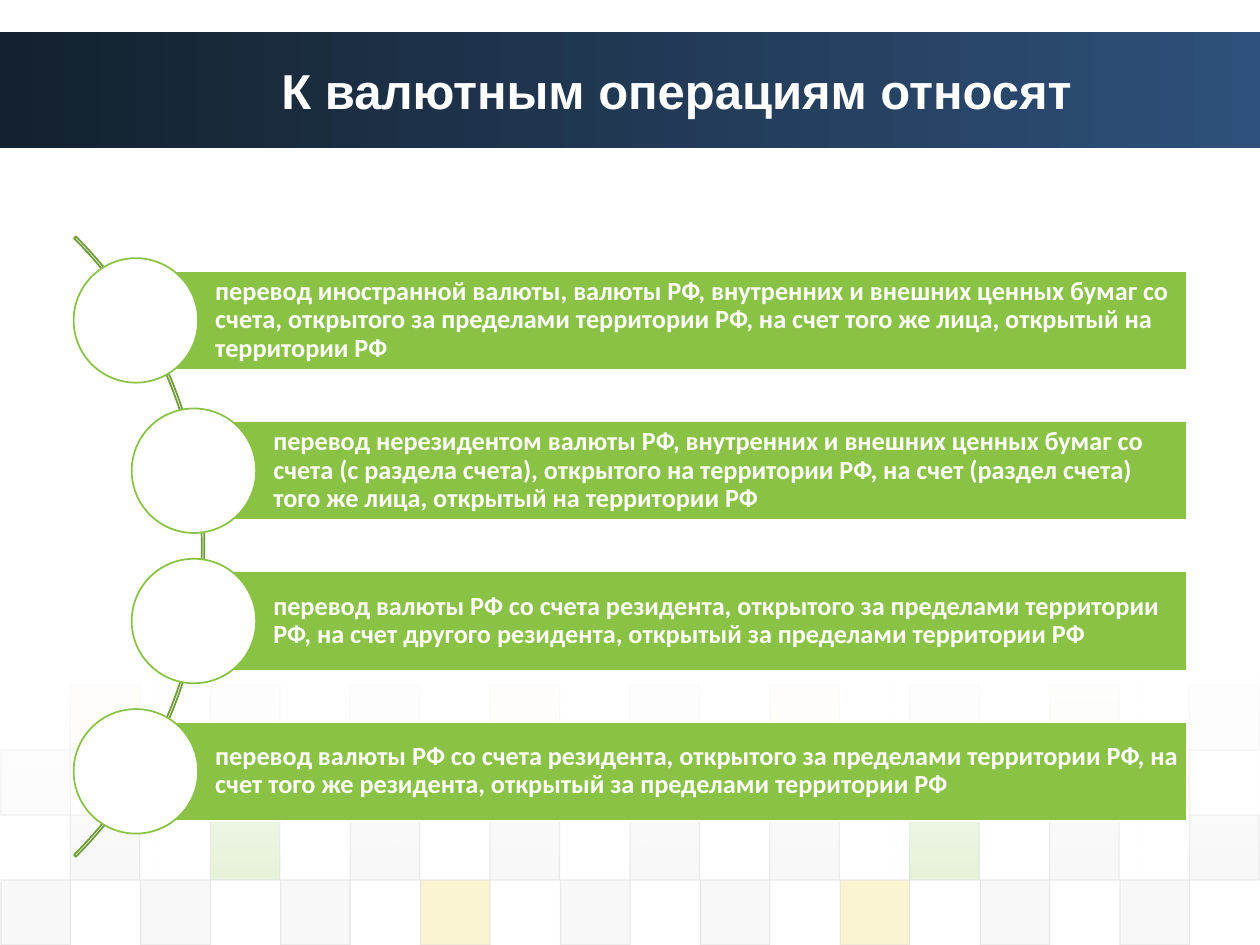
from typing import NamedTuple

from pptx import Presentation
from pptx import util as u
from pptx.dml.color import RGBColor
from pptx.enum import shapes, text
from pptx.oxml import ns, xmlchemy

Cm, Pt = u.Cm, u.Pt
KIND = shapes.MSO_SHAPE

WHITE = RGBColor(0xFF, 0xFF, 0xFF)
NIGHT = RGBColor(0x14, 0x21, 0x2E)
NAVY = RGBColor(0x2E, 0x50, 0x7A)
GREEN = RGBColor(0x8A, 0xC2, 0x46)
MOSS = RGBColor(0x6F, 0x9B, 0x38)
GOLD = RGBColor(0xEF, 0xC8, 0x21)
GREY = RGBColor(0xDD, 0xDD, 0xDD)
PALE = RGBColor(0xEA, 0xEA, 0xEA)
TINTS = {"G": GREEN, "Y": GOLD, "D": GREY, "E": PALE}


class Box(NamedTuple):
    left: float
    top: float
    width: float
    height: float

    def lengths(self) -> list:
        return [Cm(side) for side in self]


class Row(NamedTuple):
    left: float
    tints: str  # one letter per tile, a dot for a gap
    alpha: int


class Item(NamedTuple):
    left: float
    words: str


WIDE, HIGH = 25.4, 19.05
BAND = Box(0, 0.64, WIDE, 2.34)
TITLE = Box(3.38, 0.64, 20.52, 2.34)
ARC = Box(-13.56, 2.18, 17.68, 17.68)
VEIL = Box(0, 13.64, WIDE, 4.11)

TILE_W, TILE_H, TILE_GAP, TILE_TOP = 1.4, 1.31, 2.82, 13.81
ROWS = [
    Row(1.42, "YEEYDYEGE", 5),
    Row(0.02, "D.......Y", 10),
    Row(1.42, "DGDDDDGDD", 20),
    Row(0.02, "DDDYDDYDD", 20),
]

BAR_TOP, BAR_GAP, BAR_H, BAR_END, DISC = 5.46, 3.03, 2.0, 23.93, 2.51
OUTER, INNER = 2.74, 3.91
ITEMS = [
    Item(OUTER, "перевод иностранной валюты, валюты РФ, внутренних и внешних "
                "ценных бумаг со счета, открытого за пределами территории РФ, "
                "на счет того же лица, открытый на территории РФ"),
    Item(INNER, "перевод нерезидентом валюты РФ, внутренних и внешних ценных "
                "бумаг со счета (с раздела счета), открытого на территории РФ, "
                "на счет (раздел счета) того же лица, открытый на территории РФ"),
    Item(INNER, "перевод валюты РФ со счета резидента, открытого за пределами "
                "территории РФ, на счет другого резидента, открытый за "
                "пределами территории РФ"),
    Item(OUTER, "перевод валюты РФ со счета резидента, открытого за пределами "
                "территории РФ, на счет того же резидента, открытый за "
                "пределами территории РФ"),
]


def fade(colors: list, alphas: list) -> None:
    """Give each colour element its opacity in percent."""
    for color, alpha in zip(colors, alphas):
        node = xmlchemy.OxmlElement("a:alpha")
        node.set("val", str(alpha * 1000))
        color.append(node)


def draw(slide, kind, box: Box, fill=None, line=None, width=1.0):
    shape = slide.shapes.add_shape(kind, *box.lengths())
    shape.shadow.inherit = False
    if fill is None:
        shape.fill.background()
    else:
        shape.fill.solid()
        shape.fill.fore_color.rgb = fill
    if line is None:
        shape.line.fill.background()
    else:
        shape.line.color.rgb = line
        shape.line.width = Pt(width)
    return shape


def blend(slide, box: Box, first: RGBColor, last: RGBColor, angle: int):
    shape = draw(slide, KIND.RECTANGLE, box)
    shape.fill.gradient()
    shape.fill.gradient_angle = angle
    for stop, color in zip(shape.fill.gradient_stops, (first, last)):
        stop.color.rgb = color
    return shape


def write(shape, words: str, *, font: str, size: float, align,
          color=WHITE, bold=True, pads=(0.25, 0.13, 0.25, 0.13),
          spacing=1.0) -> None:
    frame = shape.text_frame
    frame.word_wrap = True
    frame.vertical_anchor = text.MSO_ANCHOR.MIDDLE
    (frame.margin_left, frame.margin_top,
     frame.margin_right, frame.margin_bottom) = [Cm(pad) for pad in pads]
    para = frame.paragraphs[0]
    para.alignment = align
    para.line_spacing = spacing
    run = para.add_run()
    run.text = words
    run.font.name = font
    run.font.size = Pt(size)
    run.font.bold = bold
    run.font.color.rgb = color


def tile(slide, row: Row, top: float) -> None:
    for col, tint in enumerate(row.tints):
        if tint == ".":
            continue
        box = Box(row.left + col * TILE_GAP, top, TILE_W, TILE_H)
        shape = draw(slide, KIND.RECTANGLE, box, TINTS[tint], GREY, 0.75)
        colors = shape.element.spPr.findall(".//" + ns.qn("a:srgbClr"))
        fade(colors, [row.alpha, 60])


def bar(slide, item: Item, top: float) -> None:
    box = Box(item.left, top, BAR_END - item.left, BAR_H)
    shape = draw(slide, KIND.RECTANGLE, box, GREEN, WHITE)
    write(shape, item.words, font="Calibri", size=15,
          align=text.PP_ALIGN.LEFT, pads=(1.6, 0.1, 0.1, 0.1), spacing=0.9)
    disc = Box(item.left - DISC / 2, top + (BAR_H - DISC) / 2, DISC, DISC)
    draw(slide, KIND.OVAL, disc, WHITE, GREEN)


def main() -> None:
    deck = Presentation()
    deck.slide_width, deck.slide_height = Cm(WIDE), Cm(HIGH)
    slide = deck.slides.add_slide(deck.slide_layouts[6])

    # Title band and tiled floor under a white veil
    blend(slide, BAND, NIGHT, NAVY, 0)
    for rank, row in enumerate(ROWS):
        tile(slide, row, TILE_TOP + rank * TILE_H)
    veil = blend(slide, VEIL, WHITE, WHITE, 270)
    fade(veil.element.spPr.findall(".//" + ns.qn("a:srgbClr")), [90, 0])

    # Title
    title = slide.shapes.add_textbox(*TITLE.lengths())
    write(title, "К валютным операциям относят", font="Arial", size=28,
          align=text.PP_ALIGN.CENTER)

    # Arc with the list of operations
    arc = draw(slide, KIND.BLOCK_ARC, ARC, line=MOSS)
    for spot, value in enumerate((189, 27, 0.003)):
        arc.adjustments[spot] = value
    for rank, item in enumerate(ITEMS):
        bar(slide, item, BAR_TOP + rank * BAR_GAP)

    deck.save("out.pptx")


if __name__ == "__main__":
    main()
